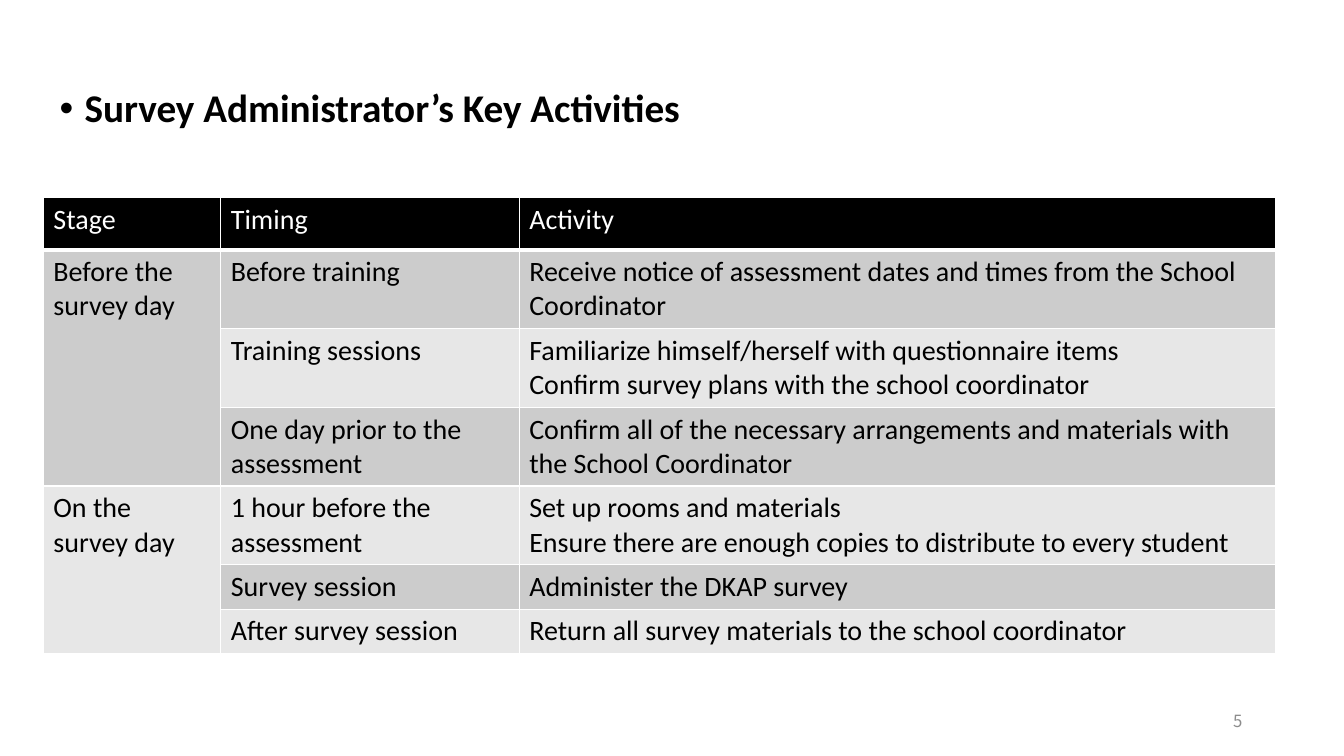
from dataclasses import dataclass

from lxml import etree
from pptx import Presentation
from pptx.dml.color import RGBColor
from pptx.enum.text import MSO_ANCHOR, MSO_AUTO_SIZE, PP_ALIGN
from pptx.oxml.ns import qn
from pptx.util import Inches, Pt

TOP, MIDDLE = MSO_ANCHOR.TOP, MSO_ANCHOR.MIDDLE
LEFT, RIGHT = PP_ALIGN.LEFT, PP_ALIGN.RIGHT
NO_AUTOFIT = MSO_AUTO_SIZE.NONE

BLACK = RGBColor(0x00, 0x00, 0x00)
WHITE = RGBColor(0xFF, 0xFF, 0xFF)
DARK_BAND = RGBColor(0xCC, 0xCC, 0xCC)
LIGHT_BAND = RGBColor(0xE7, 0xE7, 0xE7)
NUMBER_GRAY = RGBColor(0x8C, 0x8C, 0x8C)

MAIN_FONT = "Calibri"
NUMBER_FONT = "Noto Sans CJK KR"
COLUMN_WIDTHS = (1.76, 2.96, 7.5)
HEADER_HEIGHT = 0.52
LINE_HEIGHT = 0.34
CELL_PADDING = 0.1


@dataclass(frozen=True)
class Step:
    timing: str
    activity: str
    lines: int = 2


@dataclass(frozen=True)
class Stage:
    name: str
    steps: tuple[Step, ...]


HEADINGS = ("Stage", "Timing", "Activity")
STAGES = (
    Stage("Before the survey day", (
        Step("Before training",
             "Receive notice of assessment dates and times from the School Coordinator"),
        Step("Training sessions",
             "Familiarize himself/herself with questionnaire items\n"
             "Confirm survey plans with the school coordinator"),
        Step("One day prior to the assessment",
             "Confirm all of the necessary arrangements and materials with the School Coordinator"),
    )),
    Stage("On the survey day", (
        Step("1 hour before the assessment",
             "Set up rooms and materials\n"
             "Ensure there are enough copies to distribute to every student"),
        Step("Survey session", "Administer the DKAP survey", 1),
        Step("After survey session",
             "Return all survey materials to the school coordinator", 1),
    )),
)


def format_text(frame, size: float, color: RGBColor, font: str = MAIN_FONT,
                bold: bool = False, align=LEFT) -> None:
    for para in frame.paragraphs:
        para.alignment = align
        for span in para.runs:
            span.font.name = font
            span.font.size = Pt(size)
            span.font.bold = bold
            span.font.color.rgb = color


def set_borders(cell, top: float = 1, bottom: float = 1) -> None:
    properties = cell._tc.get_or_add_tcPr()
    widths = {"a:lnL": 1, "a:lnR": 1, "a:lnT": top, "a:lnB": bottom}
    for position, (tag, width) in enumerate(widths.items()):
        line = etree.Element(qn(tag), w=str(Pt(width)))
        fill = etree.SubElement(line, qn("a:solidFill"))
        etree.SubElement(fill, qn("a:srgbClr"), val=str(WHITE))
        properties.insert(position, line)


def fill_cell(cell, text: str, background: RGBColor, color: RGBColor = BLACK) -> None:
    cell.text_frame.text = text
    format_text(cell.text_frame, 20, color)
    cell.fill.solid()
    cell.fill.fore_color.rgb = background


def add_title(page) -> None:
    title = page.shapes.title
    title.left, title.top = Inches(0.49), Inches(0.83)
    title.width, title.height = Inches(11.5), Inches(4.76)
    frame = title.text_frame
    frame.text = "Survey Administrator’s Key Activities"
    frame.word_wrap = True
    frame.auto_size = NO_AUTOFIT
    frame.vertical_anchor = TOP
    format_text(frame, 28, BLACK, bold=True)
    para = frame.paragraphs[0]
    para.line_spacing = 0.9
    para.space_before = Pt(10)
    # Bullet with a hanging indent
    properties = para._p.get_or_add_pPr()
    properties.set("marL", str(Inches(0.25)))
    properties.set("indent", str(Inches(-0.25)))
    etree.SubElement(properties, qn("a:buFont"), typeface="Arial")
    etree.SubElement(properties, qn("a:buChar"), char="•")


def add_activity_table(page) -> None:
    steps = [step for stage in STAGES for step in stage.steps]
    heights = [HEADER_HEIGHT] + [step.lines * LINE_HEIGHT + CELL_PADDING for step in steps]
    table = page.shapes.add_table(
        len(heights), len(COLUMN_WIDTHS), Inches(0.43), Inches(1.96),
        Inches(sum(COLUMN_WIDTHS)), Inches(sum(heights))).table
    table.first_row = table.horz_banding = False
    for column, width in zip(table.columns, COLUMN_WIDTHS):
        column.width = Inches(width)
    for row, height in zip(table.rows, heights):
        row.height = Inches(height)

    # Header row
    for column, heading in enumerate(HEADINGS):
        fill_cell(table.cell(0, column), heading, BLACK, WHITE)

    # Stages, each spanning its steps
    row = 1
    for stage, stage_fill in zip(STAGES, (DARK_BAND, LIGHT_BAND)):
        last = row + len(stage.steps) - 1
        table.cell(row, 0).merge(table.cell(last, 0))
        fill_cell(table.cell(row, 0), stage.name, stage_fill)
        for step in stage.steps:
            band = DARK_BAND if row % 2 else LIGHT_BAND
            fill_cell(table.cell(row, 1), step.timing, band)
            fill_cell(table.cell(row, 2), step.activity, band)
            row += 1

    # White rules, heavier under the header
    for index in range(len(heights)):
        for column in range(len(COLUMN_WIDTHS)):
            set_borders(table.cell(index, column),
                        top=3 if index == 1 else 1, bottom=3 if index == 0 else 1)


def add_page_number(page) -> None:
    box = page.shapes.add_textbox(Inches(9.42), Inches(6.95), Inches(3), Inches(0.4))
    frame = box.text_frame
    frame.text = "5"
    frame.word_wrap = True
    frame.vertical_anchor = MIDDLE
    format_text(frame, 12, NUMBER_GRAY, NUMBER_FONT, align=RIGHT)


def main() -> None:
    deck = Presentation()
    deck.slide_width, deck.slide_height = Inches(13.33), Inches(7.5)
    page = deck.slides.add_slide(deck.slide_layouts[5])
    add_title(page)
    add_activity_table(page)
    add_page_number(page)
    deck.save("out.pptx")


if __name__ == "__main__":
    main()
